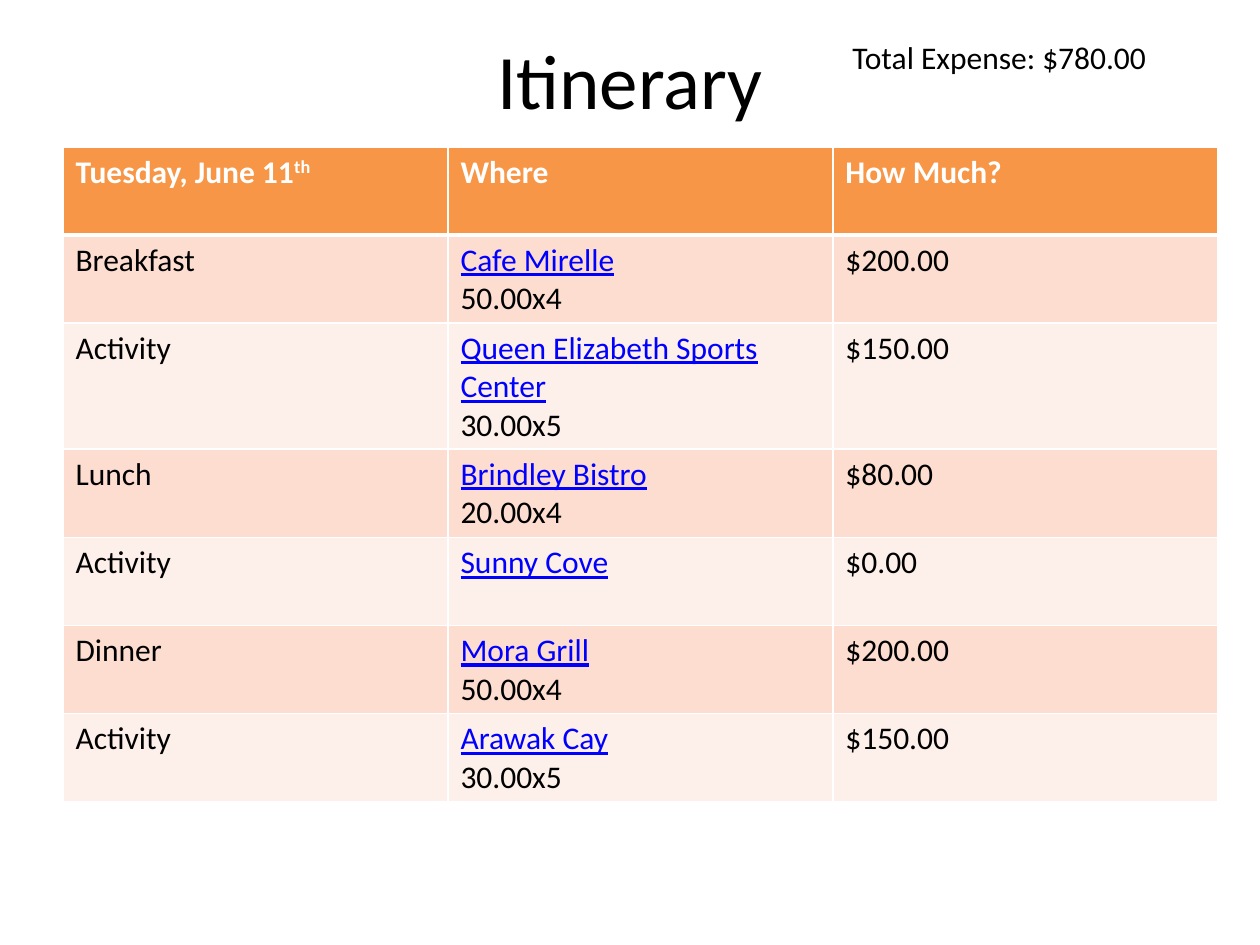
"""Build the one-day itinerary slide with its expense table."""
from lxml import etree
from pptx import Presentation
from pptx.dml.color import RGBColor
from pptx.enum.text import MSO_ANCHOR, PP_ALIGN
from pptx.oxml.ns import qn
from pptx.util import Pt

PX = 914400 // 126
MID = MSO_ANCHOR.MIDDLE
CENTER = PP_ALIGN.CENTER
HUES = {
    "text": "000000",
    "white": "FFFFFF",
    "link": "0000FF",
    "head": "F79646",
    "dark": "FCDDCF",
    "light": "FDEFE9",
}


def add_run(para, text, hue="text", size=18, bold=False, line=False):
    run = para.add_run()
    run.text = text
    font = run.font
    font.name = "Calibri"
    font.size = Pt(size)
    font.bold = bold
    font.underline = line
    font.color.rgb = RGBColor.from_string(HUES[hue])
    return run


def paint(cell, hue, base):
    cell.fill.solid()
    cell.fill.fore_color.rgb = RGBColor.from_string(HUES[hue])
    props = cell._tc.get_or_add_tcPr()
    sides = {"lnL": 1, "lnR": 1, "lnT": 1, "lnB": base}
    for spot, (tag, width) in enumerate(sides.items()):
        edge = etree.Element(qn("a:" + tag), w=str(Pt(width)))
        fill = etree.SubElement(edge, qn("a:solidFill"))
        etree.SubElement(fill, qn("a:srgbClr"), val=HUES["white"])
        props.insert(spot, edge)


deck = Presentation()
deck.slide_width = 1260 * PX
deck.slide_height = 945 * PX
slide = deck.slides.add_slide(deck.slide_layouts[5])

title = slide.shapes.title
title.left, title.top = 63 * PX, 0
title.width, title.height = 1134 * PX, 158 * PX
title.text_frame.vertical_anchor = MID
para = title.text_frame.paragraphs[0]
para.alignment = CENTER
add_run(para, "Itinerary", size=44)

total = slide.shapes.add_textbox(840 * PX, 32 * PX, 388 * PX, 50 * PX)
total.text_frame.word_wrap = True
add_run(total.text_frame.paragraphs[0], "Total Expense: $780.00")

heads = ["Tuesday, June 11", "Where", "How Much?"]
plans = [
    ("Breakfast", "Cafe Mirelle", "50.00x4", "$200.00"),
    ("Activity", "Queen Elizabeth Sports Center", "30.00x5", "$150.00"),
    ("Lunch", "Brindley Bistro", "20.00x4", "$80.00"),
    ("Activity", "Sunny Cove", "", "$0.00"),
    ("Dinner", "Mora Grill", "50.00x4", "$200.00"),
    ("Activity", "Arawak Cay", "30.00x5", "$150.00"),
]
frame = slide.shapes.add_table(
    len(plans) + 1, len(heads), 63 * PX, 147 * PX, 1155 * PX, 616 * PX
)
table = frame.table
for col in table.columns:
    col.width = 385 * PX
for row in table.rows:
    row.height = 88 * PX

for col, head in enumerate(heads):
    cell = table.cell(0, col)
    paint(cell, "head", 3)
    add_run(cell.text_frame.paragraphs[0], head, "white", bold=True)
para = table.cell(0, 0).text_frame.paragraphs[0]
mark = add_run(para, "th", "white", bold=True)
mark._r.get_or_add_rPr().set("baseline", "30000")

for row, (event, place, rate, cost) in enumerate(plans, 1):
    cells = [table.cell(row, col) for col in range(len(heads))]
    for cell in cells:
        paint(cell, "dark" if row % 2 else "light", 1)
    first, where, last = [cell.text_frame for cell in cells]
    add_run(first.paragraphs[0], event)
    add_run(where.paragraphs[0], place, "link", line=True)
    if rate:
        add_run(where.add_paragraph(), rate)
    add_run(last.paragraphs[0], cost)

deck.save("out.pptx")
